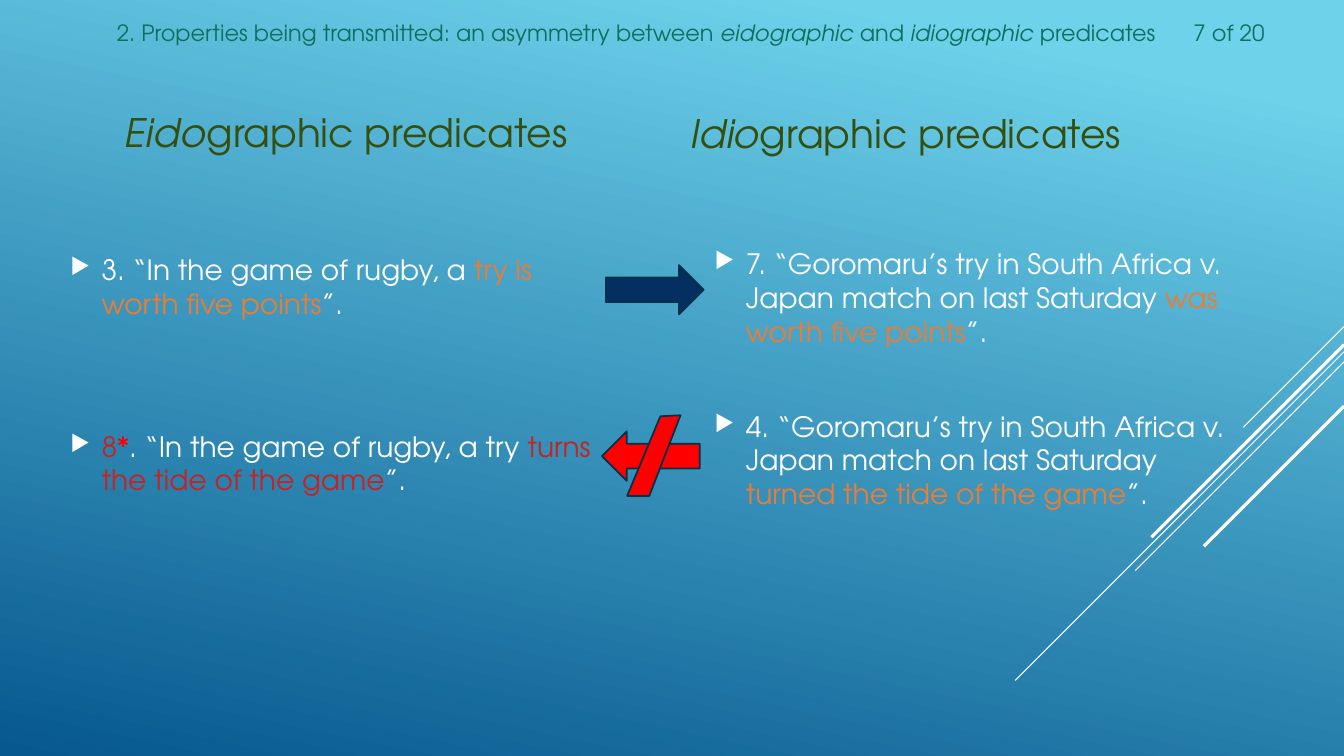
from lxml.etree import SubElement
from pptx import Presentation
from pptx.dml.color import RGBColor
from pptx.enum.shapes import MSO_CONNECTOR as Connector, MSO_SHAPE as Shape
from pptx.enum.text import MSO_ANCHOR as Anchor, PP_ALIGN as Align
from pptx.oxml.ns import qn
from pptx.util import Inches, Pt

FONT = "TeX Gyre Adventor"
COLORS = {
    "sky": "6ED2EB", "sea": "06588E", "white": "FFFFFF", "heading": "354F10",
    "header": "0F705D", "orange": "E87D37", "crimson": "C62324",
    "red": "FF0000", "navy": "052F61", "outline": "043148",
}
RAYS = [
    (3.24, 1, 0.75), (3.49, 3.26, 0.75), (3.59, 2.07, 0.75),
    (3.42, 1.91, 2.25), (4.03, 1.39, 2.25),
]
HEADINGS = [((1.14, 0.96, 5.09, 0.63), "Eido"), ((6.75, 0.97, 5.1, 0.63), "Idio")]
MATCH = "“Goromaru’s try in South Africa v. Japan match on last Saturday "
EIDOGRAPHIC = [
    [("3. “In the game of rugby, a ", "white"),
     ("try is worth five points", "orange"), ("”.", "white")],
    [("8", "crimson"), ("*", "red"), (". “In the game of rugby, a try ", "white"),
     ("turns the tide of the game", "crimson"), ("”.", "white")],
]
IDIOGRAPHIC = [
    [("7. " + MATCH, "white"), ("was worth five points", "orange"), ("”.", "white")],
    [("4. " + MATCH, "white"), ("turned the tide of the game", "orange"), ("”.", "white")],
]
HEADER = [
    ("2. Properties being transmitted: an asymmetry between ", False),
    ("eidographic", True), (" and ", False), ("idiographic ", True), ("predicates", False),
]
SLASH = [(6.22, 4.92), (6.55, 4.13), (6.75, 4.12), (6.44, 4.92)]


def color(name):
    return RGBColor.from_string(COLORS[name])


def apply_format(target, values):
    for name, value in values.items():
        setattr(target, name, value)


def paint_background(slide):
    fill = slide.background.fill
    fill.gradient()
    fill.gradient_angle = 360 - 102
    for stop, name, position in zip(fill.gradient_stops, ("sky", "sea"), (0.1, 1)):
        stop.color.rgb = color(name)
        stop.position = position


def add_ray(slide, top, length, width):
    right = 13.33
    ray = slide.shapes.add_connector(
        Connector.STRAIGHT, Inches(right), Inches(top),
        Inches(right - length), Inches(top + length))
    ray.line.color.rgb = color("white")
    ray.line.width = Pt(width)
    SubElement(ray._element.spPr, qn("a:effectLst"))


def add_text_frame(slide, box, anchor=Anchor.TOP):
    frame = slide.shapes.add_textbox(*map(Inches, box)).text_frame
    apply_format(frame, {"word_wrap": True, "vertical_anchor": anchor})
    return frame


def add_run(paragraph, text, size, color_name, italic=False):
    run = paragraph.add_run()
    run.text = text
    apply_format(run.font, {"name": FONT, "size": Pt(size), "italic": italic})
    run.font.color.rgb = color(color_name)


def add_line_of_text(slide, box, runs, size, color_name, anchor=Anchor.TOP, align=Align.LEFT):
    paragraph = add_text_frame(slide, box, anchor).paragraphs[0]
    paragraph.alignment = align
    for text, italic in runs:
        add_run(paragraph, text, size, color_name, italic)


def set_bullet(paragraph):
    properties = paragraph._p.get_or_add_pPr()
    indent = Inches(0.31)
    properties.set("marL", str(indent))
    properties.set("indent", str(-indent))
    bullet_color = SubElement(properties, qn("a:buClr"))
    SubElement(bullet_color, qn("a:srgbClr"), val=COLORS["white"])
    SubElement(properties, qn("a:buSzPct"), val="80000")
    SubElement(properties, qn("a:buChar"), char="▶")


def add_examples(slide, box, examples, gap):
    frame = add_text_frame(slide, box)
    for index, runs in enumerate(examples):
        paragraph = frame.add_paragraph() if index else frame.paragraphs[0]
        paragraph.space_before = Pt(gap if index else 0)
        set_bullet(paragraph)
        for text, color_name in runs:
            add_run(paragraph, text, 20, color_name)


def style_shape(shape, fill_name):
    shape.shadow.inherit = False
    shape.fill.solid()
    shape.fill.fore_color.rgb = color(fill_name)
    shape.line.color.rgb = color("outline")
    shape.line.width = Pt(1.25)


def add_arrow(slide, left, top, fill_name, rotation=0):
    arrow = slide.shapes.add_shape(
        Shape.RIGHT_ARROW, Inches(left), Inches(top), Inches(0.97), Inches(0.49))
    arrow.rotation = rotation
    style_shape(arrow, fill_name)


def add_slash(slide):
    start, *corners = [(Inches(x), Inches(y)) for x, y in SLASH]
    builder = slide.shapes.build_freeform(*start)
    builder.add_line_segments(corners, close=True)
    style_shape(builder.convert_to_shape(), "red")


def main():
    presentation = Presentation()
    apply_format(presentation, {"slide_width": Inches(13.33), "slide_height": Inches(7.5)})
    slide = presentation.slides.add_slide(presentation.slide_layouts[6])
    paint_background(slide)
    for ray in RAYS:
        add_ray(slide, *ray)
    for box, prefix in HEADINGS:
        runs = [(prefix, True), ("graphic predicates", False)]
        add_line_of_text(slide, box, runs, 28, "heading", Anchor.BOTTOM)
    add_examples(slide, (0.6, 2.46, 5.4, 2.58), EIDOGRAPHIC, 78)
    add_examples(slide, (6.99, 2.4, 5.39, 2.9), IDIOGRAPHIC, 44)
    add_arrow(slide, 6.01, 2.63, "navy")
    add_arrow(slide, 5.97, 4.28, "red", 180)
    add_slash(slide)
    add_line_of_text(slide, (1.06, 0.14, 10.99, 0.37), HEADER, 16, "header")
    add_line_of_text(slide, (11.06, 0.14, 1.58, 0.37), [("7 of 20", False)], 16, "header",
                     align=Align.RIGHT)
    presentation.save("out.pptx")


if __name__ == "__main__":
    main()
